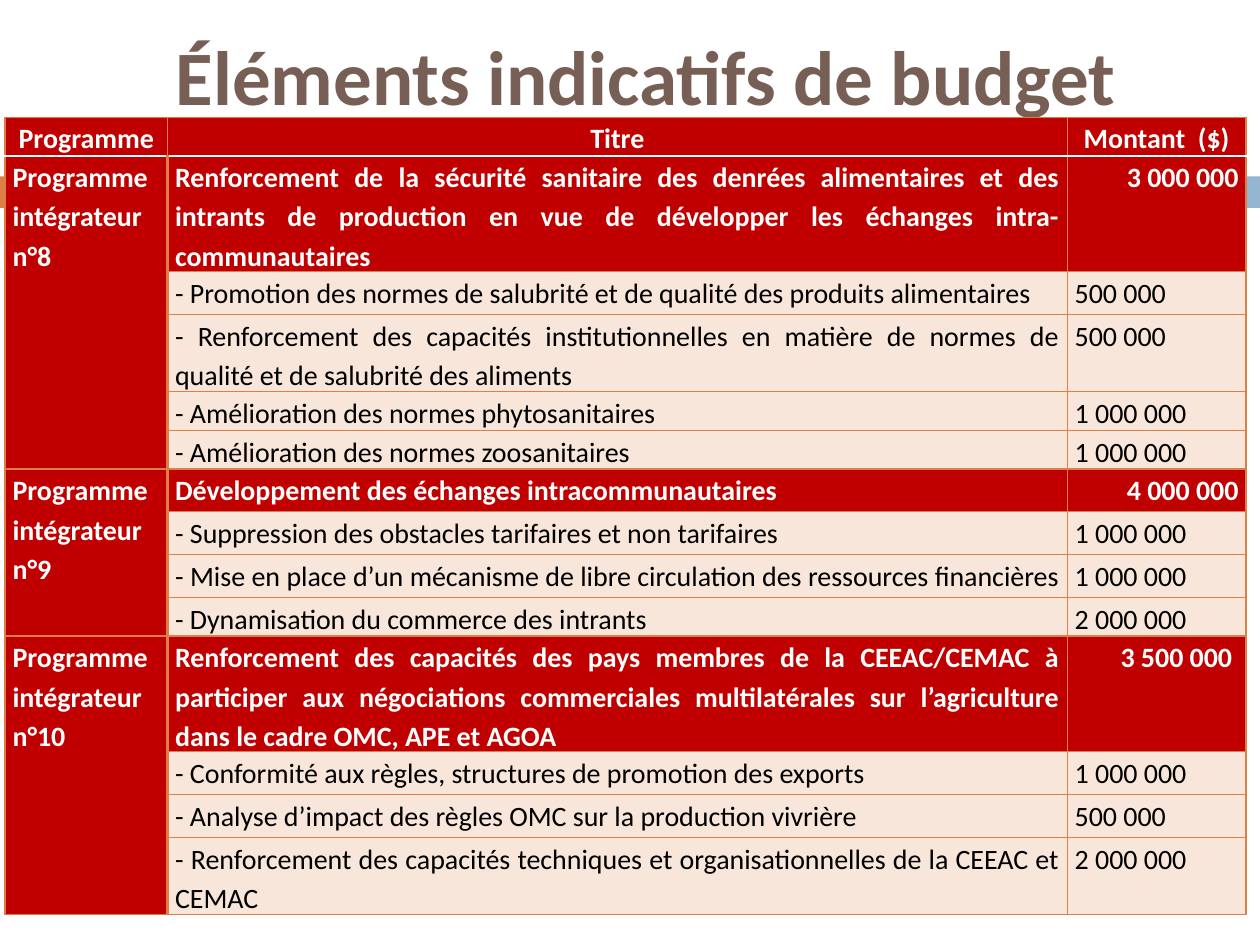
from lxml import etree
from pptx import Presentation
from pptx import util as u
from pptx.dml.color import RGBColor
from pptx.enum import shapes, text
from pptx.oxml.ns import qn

W, H = 10, 7.5
RED, CREAM, ORANGE, BLUE = "C00000", "F8E6DA", "DD8047", "94B6D2"
WHITE, BLACK, BROWN = "FFFFFF", "000000", "775F55"
LEFT, MID, RIGHT = text.PP_ALIGN.JUSTIFY, text.PP_ALIGN.CENTER, text.PP_ALIGN.RIGHT

COLS = [1.29, 7.14, 1.42]
UNIT = 0.17  # row heights are multiples of this
HEAD = ["Programme", "Titre", "Montant  ($)"]

# Each program: name, then rows of (height in units, title, amount);
# the first row is the program's total.
PLAN = [
    ("Programme intégrateur n°8", [
        (4, "Renforcement de la sécurité sanitaire des denrées alimentaires et des "
            "intrants de production en vue de développer les échanges "
            "intra-communautaires ", "3 000 000"),
        (2, "- Promotion des normes de salubrité et de qualité des produits "
            "alimentaires ", "500 000"),
        (3, "- Renforcement des capacités institutionnelles en matière de normes de "
            "qualité et de salubrité des aliments ", "500 000"),
        (1, "- Amélioration des normes phytosanitaires ", "1 000 000"),
        (1, "- Amélioration des normes zoosanitaires", "1 000 000"),
    ]),
    ("Programme intégrateur n°9", [
        (2, "Développement des échanges intracommunautaires ", "4 000 000"),
        (2, "- Suppression des obstacles tarifaires et non tarifaires ", "1 000 000"),
        (2, "- Mise en place d’un mécanisme de libre circulation des ressources "
            "financières ", "1 000 000"),
        (1, "- Dynamisation du commerce des intrants ", "2 000 000 "),
    ]),
    ("Programme intégrateur n°10", [
        (4, "Renforcement des capacités des pays membres de la CEEAC/CEMAC à "
            "participer aux négociations commerciales multilatérales sur "
            "l’agriculture dans le cadre OMC, APE et AGOA ", "3 500 000 "),
        (2, "- Conformité aux règles, structures de promotion des exports",
         "1 000 000"),
        (2, "- Analyse d’impact des règles OMC sur la production vivrière ",
         "500 000"),
        (2, "- Renforcement des capacités techniques et organisationnelles de la "
            "CEEAC et CEMAC", "2 000 000"),
    ]),
]


def paint(fill, color):
    fill.solid()
    fill.fore_color.rgb = RGBColor.from_string(color)


def write(frame, words, size, color, bold, align):
    para = frame.paragraphs[0]
    para.alignment = align
    run = para.add_run()
    run.text = words
    font = run.font
    font.name, font.size, font.bold = "Calibri", u.Pt(size), bold
    font.color.rgb = RGBColor.from_string(color)
    return para


def add_bar(slide, left, width):
    bar = slide.shapes.add_shape(
        shapes.MSO_SHAPE.RECTANGLE, u.Inches(left * W), u.Inches(1.4),
        u.Inches(width * W), u.Inches(0.25))
    bar.shadow.inherit = False
    bar.line.fill.background()
    return bar


def add_title(slide, words):
    box = slide.shapes.add_textbox(
        u.Inches(0.67), u.Inches(0.05), u.Inches(8.92), u.Inches(1.08))
    frame = box.text_frame
    frame.word_wrap = True
    frame.vertical_anchor = text.MSO_ANCHOR.MIDDLE
    write(frame, words, 44, BROWN, True, MID)


def add_edge(cell, side, color, width):
    line = etree.SubElement(cell._tc.get_or_add_tcPr(), qn("a:ln" + side),
                            w=str(u.Pt(width)))
    fill = etree.SubElement(line, qn("a:solidFill"))
    etree.SubElement(fill, qn("a:srgbClr"), val=color)


def frame_cell(cell, row, col):
    # Neighbours share an edge, so its style depends on the grid line alone
    for side, line in (("L", col), ("R", col + 1)):
        add_edge(cell, side, ORANGE, 1.5 if line == 1 and row else 0.79)
    for side, line in (("T", row), ("B", row + 1)):
        add_edge(cell, side, *((WHITE, 1.5) if line == 1 else (ORANGE, 0.79)))


def fill_cell(cell, words, strong, align):
    color = WHITE if strong else BLACK
    write(cell.text_frame, words, 16, color, strong, align).line_spacing = 1.15


def add_budget(slide):
    rows = [item for _, items in PLAN for item in items]
    high = [1] + [item[0] for item in rows]
    table = slide.shapes.add_table(
        len(high), len(COLS), u.Inches(0.04), u.Inches(0.93),
        u.Inches(sum(COLS)), u.Inches(sum(high) * UNIT)).table
    table.horz_banding = False
    for col, width in zip(table.columns, COLS):
        col.width = u.Inches(width)
    for row, count in zip(table.rows, high):
        row.height = u.Inches(count * UNIT)

    # Borders, margins and base fill
    for r in range(len(high)):
        for c in range(len(COLS)):
            cell = table.cell(r, c)
            cell.margin_left = cell.margin_right = u.Inches(0.06)
            cell.margin_top = cell.margin_bottom = 0
            frame_cell(cell, r, c)
            paint(cell.fill, CREAM if r and c else RED)

    # Header
    for c, words in enumerate(HEAD):
        fill_cell(table.cell(0, c), words, True, MID)

    # Programs
    top = 1
    for name, items in PLAN:
        table.cell(top, 0).merge(table.cell(top + len(items) - 1, 0))
        fill_cell(table.cell(top, 0), name, True, LEFT)
        for i, (_, title, cost) in enumerate(items):
            total = i == 0
            pair = table.cell(top + i, 1), table.cell(top + i, 2)
            fill_cell(pair[0], title, total, LEFT)
            fill_cell(pair[1], cost, total, RIGHT if total else LEFT)
            if total:
                for cell in pair:
                    paint(cell.fill, RED)
        top += len(items)


def main():
    deck = Presentation()
    deck.slide_width, deck.slide_height = u.Inches(W), u.Inches(H)
    slide = deck.slides.add_slide(deck.slide_layouts[6])
    # Side bars behind the table
    paint(add_bar(slide, 0, 0.058).fill, ORANGE)
    paint(add_bar(slide, 0.065, 0.935).fill, BLUE)
    add_title(slide, "Éléments indicatifs de budget")
    add_budget(slide)
    deck.save("out.pptx")


if __name__ == "__main__":
    main()
